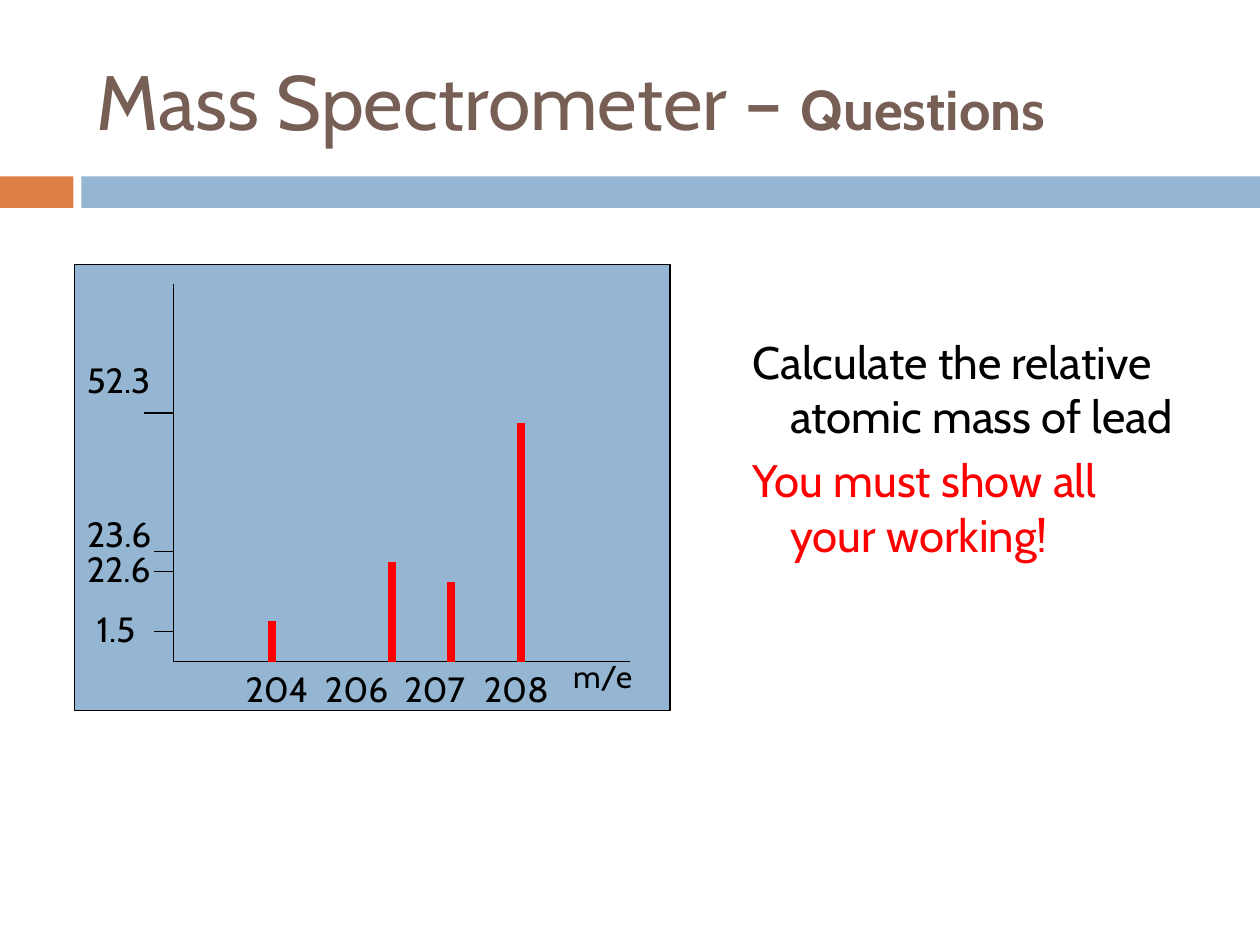
from pptx import Presentation
from pptx.dml.color import RGBColor
from pptx.enum.shapes import MSO_CONNECTOR as Connector, MSO_SHAPE as Preset
from pptx.enum.text import MSO_ANCHOR as Anchor
from pptx.oxml.ns import qn
from pptx.util import Pt
from lxml.etree import SubElement

COLORS = {"brown": "775F55", "orange": "DD8047", "blue": "94B6D2",
          "black": "000000", "red": "FF0000"}


def add_span(para, text, size=20, color="black", bold=False, font="Cabin"):
    span = para.add_run()
    span.text = text
    span.font.name = font
    span.font.size = Pt(size)
    span.font.bold = bold
    span.font.color.rgb = RGBColor.from_string(COLORS[color])


class SlideBuilder:
    """Draws styled elements on the current slide or group."""

    def __init__(self, page):
        self.shapes = page.shapes

    def start_group(self):
        self.shapes = self.shapes.add_group_shape().shapes

    def rect(self, x, y, width, height, fill, outline=None):
        box = self.shapes.add_shape(Preset.RECTANGLE, Pt(x), Pt(y), Pt(width), Pt(height))
        box.shadow.inherit = False
        box.fill.solid()
        box.fill.fore_color.rgb = RGBColor.from_string(COLORS[fill])
        if outline:
            box.line.color.rgb = RGBColor.from_string(COLORS[outline])
            box.line.width = Pt(0.75)
        else:
            box.line.fill.background()

    def line(self, x1, y1, x2, y2, color="black", width=0.75):
        line = self.shapes.add_connector(Connector.STRAIGHT, Pt(x1), Pt(y1), Pt(x2), Pt(y2))
        line.line.color.rgb = RGBColor.from_string(COLORS[color])
        line.line.width = Pt(width)
        SubElement(line._element.spPr, qn("a:effectLst"))

    def text_frame(self, x, y, width, height, anchor=Anchor.TOP):
        frame = self.shapes.add_textbox(Pt(x), Pt(y), Pt(width), Pt(height)).text_frame
        frame.word_wrap = True
        frame.vertical_anchor = anchor
        return frame

    def title(self, text, emphasis):
        para = self.text_frame(48, 18, 642, 78, Anchor.MIDDLE).paragraphs[0]
        add_span(para, text, size=44, color="brown")
        add_span(para, emphasis, size=32, color="brown", bold=True)

    def body(self, lines):
        frame = self.text_frame(394, 150, 284, 324)
        frame.margin_top = Pt(40.7)
        for index, (text, color) in enumerate(lines):
            para = frame.add_paragraph() if index else frame.paragraphs[0]
            para.space_before = Pt(5.5 if index else 0)
            properties = para._p.get_or_add_pPr()
            properties.set("marL", str(Pt(50.4)))
            properties.set("indent", str(-Pt(21.6)))
            add_span(para, text, size=26, color=color)

    def label(self, text, x, y, size=20, height=31):
        add_span(self.text_frame(x, y, 57, height).paragraphs[0], text, size=size)


def draw_spectrum(builder):
    axis_x, base_y = 99.2, 378
    builder.start_group()
    builder.rect(42.5, 151, 340.5, 255, "blue", outline="black")
    builder.line(axis_x, 162, axis_x, base_y)
    builder.line(axis_x, base_y, 360, base_y)
    for x, height in [(155.7, 23), (223.8, 57), (257.8, 45.4), (297.5, 136)]:
        builder.line(x, base_y, x, base_y - height, color="red", width=4.5)
    for index, mass in enumerate(["204", "206", "207", "208"]):
        builder.label(mass, 133.2 + 45.4 * index, base_y)
    builder.label("m/e", 320.4, 372.2, size=18, height=36)
    for text, x, y, tick_y, length in [("52.3", 42.5, 201.6, 236, 17),
                                       ("23.6", 42.5, 289.4, 315.3, 11.3),
                                       ("22.6", 42.5, 309.6, 326.7, 11.3),
                                       ("1.5", 48.2, 343.4, 360.7, 11.3)]:
        builder.line(axis_x, tick_y, axis_x - length, tick_y)
        builder.label(text, x, y)


def main():
    deck = Presentation()
    deck.slide_width, deck.slide_height = Pt(720), Pt(540)
    builder = SlideBuilder(deck.slides.add_slide(deck.slide_layouts[6]))
    builder.rect(0, 100.8, 42, 18, "orange")
    builder.rect(46.5, 100.8, 673.5, 18, "blue")
    builder.title("Mass Spectrometer – ", "Questions")
    builder.body([("Calculate the relative atomic mass of lead", "black"),
                  ("You must show all your working!", "red")])
    draw_spectrum(builder)
    deck.save("out.pptx")


if __name__ == "__main__":
    main()
